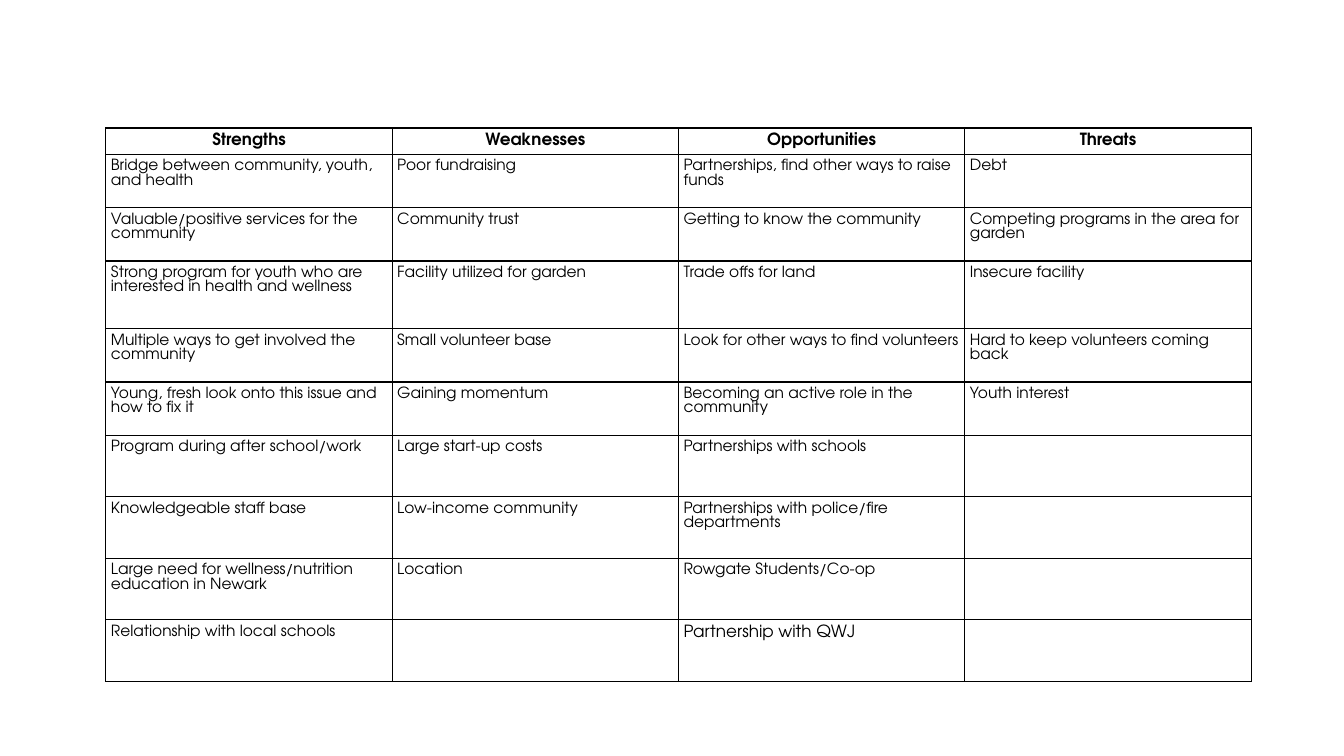
import pptx
import pptx.dml.color
import pptx.enum.text
import pptx.oxml.ns
import pptx.util
from lxml import etree
from pptx.util import Inches

COLORS = {"text": "000000", "border": "000000", "cell": "FFFFFF"}

HEADERS = ["Strengths", "Weaknesses", "Opportunities", "Threats"]
ROWS = [
    ["Bridge between community, youth, and health", "Poor fundraising",
     "Partnerships, find other ways to raise funds", "Debt"],
    ["Valuable/positive services for the community", "Community trust",
     "Getting to know the community", "Competing programs in the area for garden"],
    ["Strong program for youth who are interested in health and wellness",
     "Facility utilized for garden", "Trade offs for land", "Insecure facility"],
    ["Multiple ways to get involved the community", "Small volunteer base",
     "Look for other ways to find volunteers", "Hard to keep volunteers coming back"],
    ["Young, fresh look onto this issue and how to fix it", "Gaining momentum",
     "Becoming an active role in the community", "Youth interest"],
    ["Program during after school/work", "Large start-up costs",
     "Partnerships with schools", ""],
    ["Knowledgeable staff base", "Low-income community",
     "Partnerships with police/fire departments", ""],
    ["Large need for wellness/nutrition education in Newark", "Location",
     "Rowgate Students/Co-op", ""],
    ["Relationship with local schools", "", "Partnership with QWJ", ""],
]
ROW_HEIGHTS = [0.26, 0.53, 0.53, 0.67, 0.53, 0.53] + [0.61] * 4
COLUMN_WIDTH = 2.84


class SlideBuilder:
    def __init__(self, prs, font="TeX Gyre Adventor", size=11, header_size=12):
        self.s = prs.slides.add_slide(prs.slide_layouts[6])
        self.font, self.size, self.header_size = font, size, header_size

    def table(self, left, top, rows, heights, column_width):
        columns = len(rows[0])
        table = self.s.shapes.add_table(
            len(rows), columns, Inches(left), Inches(top),
            Inches(column_width * columns), Inches(sum(heights))).table
        table.first_row = table.horz_banding = False
        for column in table.columns:
            column.width = Inches(column_width)
        for row, height in zip(table.rows, heights):
            row.height = Inches(height)
        for i, texts in enumerate(rows):
            for j, text in enumerate(texts):
                # The closing partnership entry is as large as the headers
                large = i == 0 or (i == len(rows) - 1 and j == 2)
                self.cell(table.cell(i, j), text, header=i == 0,
                          size=self.header_size if large else self.size)

    def cell(self, cell, text, header, size):
        cell.margin_left = cell.margin_right = Inches(0.05)
        cell.margin_top = cell.margin_bottom = Inches(0.05)
        self.borders(cell)
        cell.fill.solid()
        cell.fill.fore_color.rgb = pptx.dml.color.RGBColor.from_string(COLORS["cell"])
        p = cell.text_frame.paragraphs[0]
        p.font.size = pptx.util.Pt(size)
        if header:
            p.alignment = pptx.enum.text.PP_ALIGN.CENTER
        if text:
            r = p.add_run()
            r.text = text
            r.font.name = self.font
            r.font.size = pptx.util.Pt(size)
            r.font.bold = header
            r.font.color.rgb = pptx.dml.color.RGBColor.from_string(COLORS["text"])

    def borders(self, cell):
        qn = pptx.oxml.ns.qn
        tc_pr = cell._tc.get_or_add_tcPr()
        for side in ("a:lnL", "a:lnR", "a:lnT", "a:lnB"):
            line = etree.SubElement(tc_pr, qn(side), w=str(pptx.util.Pt(1)))
            fill = etree.SubElement(line, qn("a:solidFill"))
            etree.SubElement(fill, qn("a:srgbClr"), val=COLORS["border"])


def main():
    prs = pptx.Presentation()
    prs.slide_width, prs.slide_height = Inches(13.33), Inches(7.5)

    # SWOT table
    builder = SlideBuilder(prs)
    builder.table(1.05, 1.27, [HEADERS] + ROWS, ROW_HEIGHTS, COLUMN_WIDTH)

    prs.save("out.pptx")


if __name__ == "__main__":
    main()
